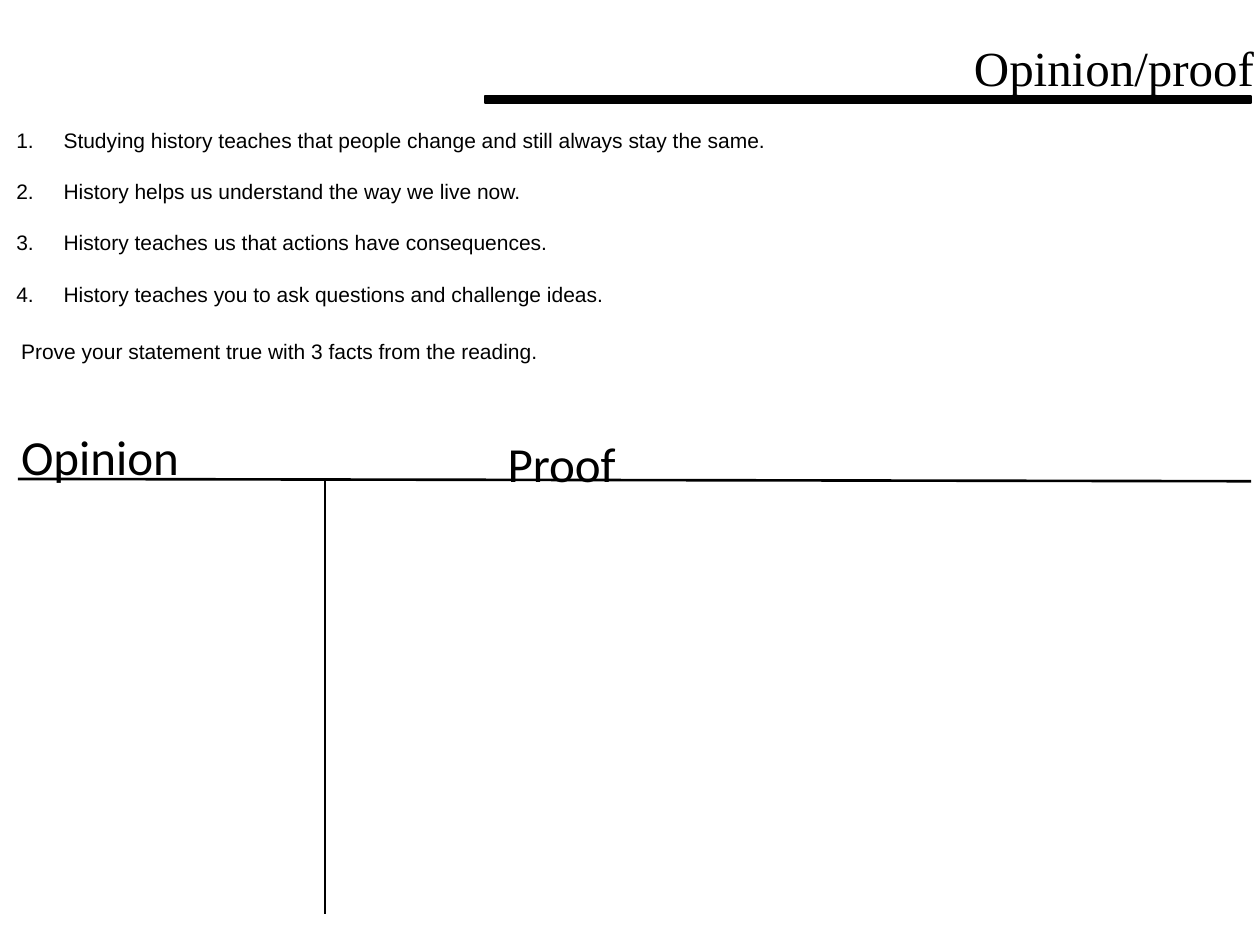
from dataclasses import dataclass

from lxml import etree
from pptx import Presentation
from pptx.dml.color import RGBColor
from pptx.enum.shapes import MSO_CONNECTOR, MSO_SHAPE
from pptx.enum.text import MSO_AUTO_SIZE, PP_ALIGN
from pptx.oxml.ns import qn
from pptx.util import Pt

STRAIGHT = MSO_CONNECTOR.STRAIGHT
RECTANGLE = MSO_SHAPE.RECTANGLE
FIT_SHAPE = MSO_AUTO_SIZE.SHAPE_TO_FIT_TEXT
LEFT, RIGHT = PP_ALIGN.LEFT, PP_ALIGN.RIGHT


@dataclass(frozen=True)
class Theme:
    ink: RGBColor = RGBColor(0, 0, 0)
    paper: RGBColor = RGBColor(255, 255, 255)
    title_font: str = "Times New Roman"
    heading_font: str = "Calibri"
    body_font: str = "Arial"
    heading_size: int = 28
    body_size: int = 12


THEME = Theme()

STATEMENTS = [
    "Studying history teaches that people change and still always stay the same.",
    "History helps us understand the way we live now.",
    "History teaches us that actions have consequences.",
    "History teaches you to ask questions and challenge ideas.\u00a0".rstrip(),
]
LIST_INDENT = 27
LIST_GAP = 14.8


def add_text(slide, lines, left, top, width, height, *, font=THEME.body_font,
             size=THEME.body_size, align=LEFT, gap=0, margin_top=3.6):
    """Add a text box with one paragraph per line and return its paragraphs."""
    box = slide.shapes.add_textbox(Pt(left), Pt(top), Pt(width), Pt(height))
    frame = box.text_frame
    frame.word_wrap = True
    frame.auto_size = FIT_SHAPE
    frame.margin_top = Pt(margin_top)
    frame.text = "\n".join(lines)
    for paragraph in frame.paragraphs:
        paragraph.alignment = align
        paragraph.space_after = Pt(gap)
        for run in paragraph.runs:
            run.font.name = font
            run.font.size = Pt(size)
            run.font.color.rgb = THEME.ink
    return frame.paragraphs


def number_paragraphs(paragraphs, indent):
    """Turn paragraphs into a numbered list with a hanging indent."""
    for paragraph in paragraphs:
        properties = paragraph._p.get_or_add_pPr()
        properties.set("marL", str(Pt(indent)))
        properties.set("indent", str(-Pt(indent)))
        etree.SubElement(properties, qn("a:buFont"), typeface="+mj-lt")
        etree.SubElement(properties, qn("a:buAutoNum"), type="arabicPeriod")


def add_line(slide, start, end, width=1.5):
    line = slide.shapes.add_connector(STRAIGHT, *map(Pt, start + end))
    line.line.color.rgb = THEME.ink
    line.line.width = Pt(width)
    etree.SubElement(line._element.spPr, qn("a:effectLst"))


def add_bar(slide, left, top, width, height):
    bar = slide.shapes.add_shape(RECTANGLE, Pt(left), Pt(top), Pt(width), Pt(height))
    bar.shadow.inherit = False
    bar.fill.solid()
    bar.fill.fore_color.rgb = THEME.ink
    bar.line.color.rgb = THEME.ink
    bar.line.width = Pt(1)


def main():
    presentation = Presentation()
    presentation.slide_width, presentation.slide_height = Pt(720), Pt(540)
    slide = presentation.slides.add_slide(presentation.slide_layouts[6])
    slide.background.fill.solid()
    slide.background.fill.fore_color.rgb = THEME.paper

    # Instruction
    add_text(slide, ["Prove your statement true with 3 facts from the reading."],
             5, 190, 528, 21.6)

    # T-chart: top line, column headings, divider
    add_line(slide, (10.2, 273.7), (715, 275))
    for heading, left, top in (("Opinion", 5, 240), ("Proof", 283, 244)):
        add_text(slide, [heading], left, top, 128, 41,
                 font=THEME.heading_font, size=THEME.heading_size)
    add_line(slide, (185.8, 275), (185.8, 522))

    # Title and its underline bar
    add_text(slide, ["Opinion/proof"], 22.3, 18, 701.3, 41,
             font=THEME.title_font, size=THEME.heading_size, align=RIGHT)
    add_bar(slide, 277, 54.7, 438, 4.3)

    # Numbered statements
    statements = add_text(slide, STATEMENTS, 2.2, 54.7, 688, 124,
                          gap=LIST_GAP, margin_top=18.3)
    number_paragraphs(statements, LIST_INDENT)

    presentation.save("out.pptx")


if __name__ == "__main__":
    main()
